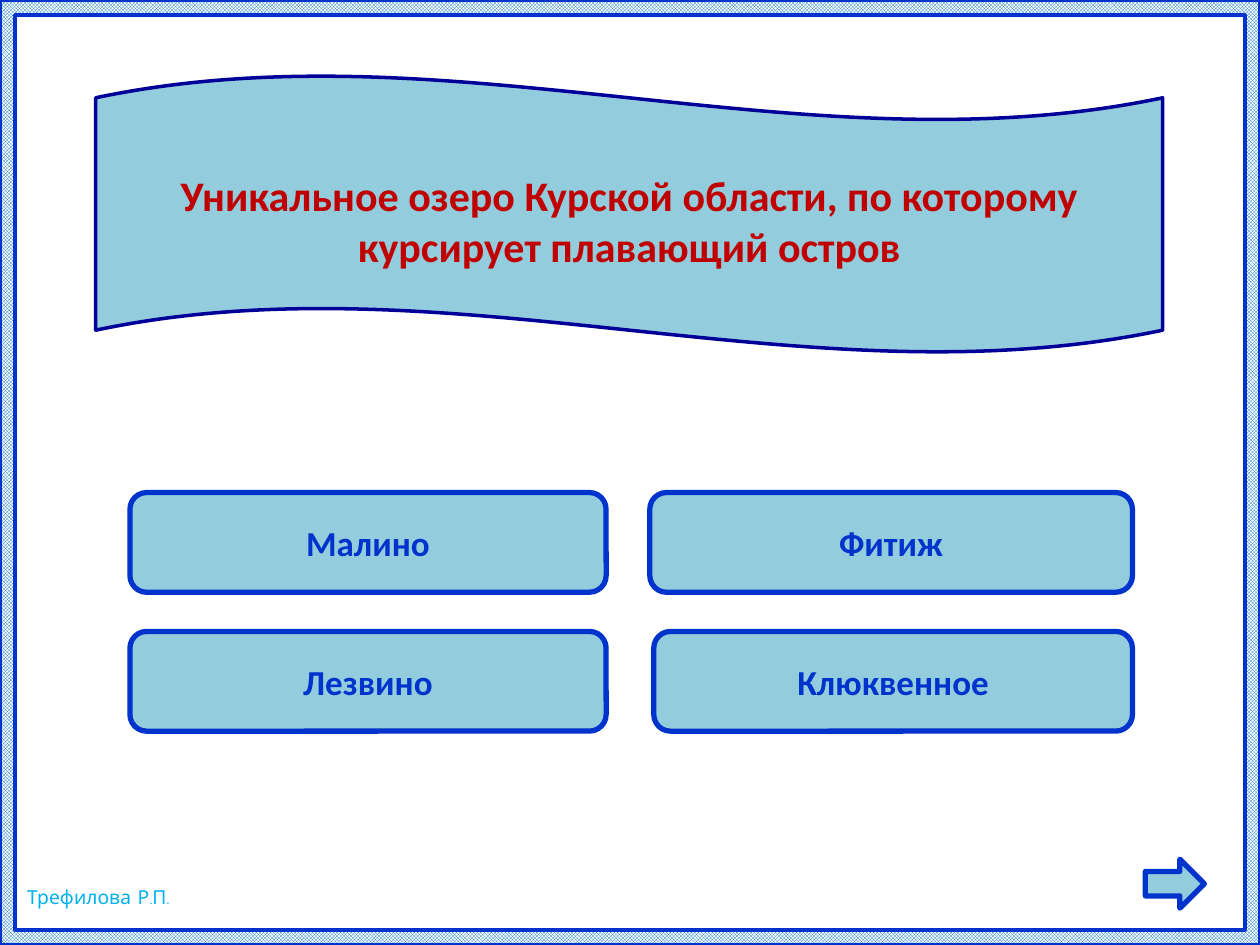
from pptx import Presentation
from pptx.dml.color import RGBColor
from pptx.enum.dml import MSO_PATTERN
from pptx.enum.shapes import MSO_SHAPE
from pptx.enum.text import MSO_ANCHOR, PP_ALIGN
from pptx.util import Cm, Pt

FRAME, WAVE = MSO_SHAPE.FRAME, MSO_SHAPE.WAVE
ROUNDED, ARROW = MSO_SHAPE.ROUNDED_RECTANGLE, MSO_SHAPE.RIGHT_ARROW
CHECKS = MSO_PATTERN.SMALL_CHECKER_BOARD
MIDDLE, CENTER = MSO_ANCHOR.MIDDLE, PP_ALIGN.CENTER

SKY, BLUE, NAVY = "93CDDD", "0033CC", "000099"


def color(value):
    return RGBColor.from_string(value)


def add_figure(kind, left, top, width, height, outline, weight,
               text="", size=20, text_color=BLUE):
    figure = slide.shapes.add_shape(kind, Cm(left), Cm(top), Cm(width), Cm(height))
    figure.shadow.inherit = False
    figure.fill.solid()
    figure.fill.fore_color.rgb = color(SKY)
    figure.line.color.rgb = color(outline)
    figure.line.width = Pt(weight)
    if text:
        frame = figure.text_frame
        frame.word_wrap = True
        frame.vertical_anchor = MIDDLE
        paragraph = frame.paragraphs[0]
        paragraph.text = text
        paragraph.alignment = CENTER
        paragraph.font.name = "Calibri"
        paragraph.font.size = Pt(size)
        paragraph.font.bold = True
        paragraph.font.color.rgb = color(text_color)
    return figure


prs = Presentation()
prs.slide_width, prs.slide_height = Cm(25.4), Cm(19.05)
slide = prs.slides.add_slide(prs.slide_layouts[6])

# Checked border around the slide
border = add_figure(FRAME, 0, 0, 25.4, 19.05, BLUE, 2)
border.adjustments[0] = 0.016
border.fill.patterned()
border.fill.pattern = CHECKS
border.fill.fore_color.rgb = color("0070C0")
border.fill.back_color.rgb = color("FFFFFF")

# Author
author = slide.shapes.add_textbox(Cm(0.3), Cm(17.73), Cm(3.61), Cm(0.74))
author.text_frame.word_wrap = True
signature = author.text_frame.paragraphs[0]
signature.text = "Трефилова Р.П."
signature.font.name = "Comic Neue"
signature.font.size = Pt(11)
signature.font.color.rgb = color("00B0F0")

# Question banner, its text a little below the middle
question = add_figure(
    WAVE, 1.93, 1.52, 21.51, 5.59, NAVY, 2,
    "Уникальное озеро Курской области, по которому курсирует плавающий остров",
    24, "C00000")
question.adjustments[0] = 0.081
question.adjustments[1] = 0
question.text_frame.margin_top = Cm(0.38)

# Answers: the right column ends on one edge
LEFT_EDGE, RIGHT_EDGE, LEFT_WIDTH, HEIGHT = 2.62, 22.83, 9.6, 2.01
rows = [
    (9.93, "Малино", "Фитиж", 9.73),
    (12.73, "Лезвино", "Клюквенное", 9.65),
]
for top, left_answer, right_answer, right_width in rows:
    add_figure(ROUNDED, LEFT_EDGE, top, LEFT_WIDTH, HEIGHT, BLUE, 3, left_answer)
    add_figure(ROUNDED, RIGHT_EDGE - right_width, top, right_width, HEIGHT,
               BLUE, 3, right_answer)

# Next-question arrow
add_figure(ARROW, 23.09, 17.32, 1.19, 0.99, BLUE, 3)

prs.save("out.pptx")
